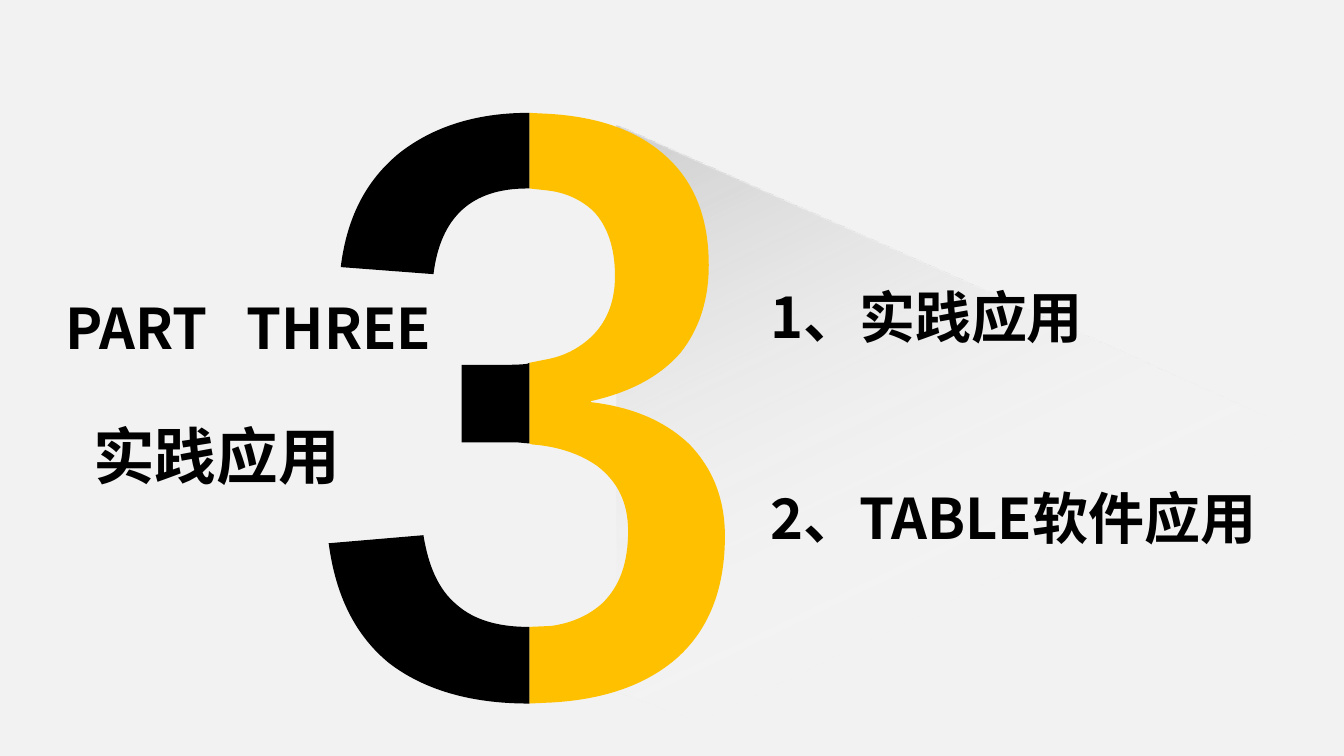
"""Build the section slide for part three."""
from dataclasses import dataclass

from lxml import etree
from pptx import Presentation
from pptx import util as u
from pptx.dml.color import RGBColor
from pptx.enum import text
from pptx.oxml.ns import qn


@dataclass(frozen=True)
class Theme:
    """Colours, fonts and type sizes."""
    paper: str = "F2F2F2"
    ink: str = "000000"
    accent: str = "FFC000"
    shadow: tuple = ((0, "85A3D9", 54), (0, "BFBFBF", 100), (54, "FFFFFF", 0))
    shadow_angle: int = 40
    font: str = "Noto Sans CJK JP"
    font_cn: str = "Noto Sans CJK SC"
    body: int = 40
    title: int = 44


CAST_SHADOW = [(4.66, 2.93), (13.98, 2.93), (13.98, 7.58), (6.96, 8.05)]

RIGHT_HALF = [
    (5.25, 1.12), (5.45, 1.13),
    (5.93, 1.16, 6.3, 1.29, 6.57, 1.52), (6.88, 1.78, 7.03, 2.15, 7.03, 2.63),
    (7.03, 2.97, 6.94, 3.26, 6.75, 3.5), (6.55, 3.73, 6.26, 3.89, 5.86, 3.98),
    (5.86, 3.99),
    (6.28, 4.04, 6.6, 4.18, 6.84, 4.41), (7.07, 4.65, 7.19, 4.95, 7.19, 5.32),
    (7.19, 5.86, 7.02, 6.27, 6.69, 6.55), (6.39, 6.8, 5.99, 6.94, 5.47, 6.97),
    (5.25, 6.98), (5.25, 6.22), (5.47, 6.21),
    (5.68, 6.18, 5.85, 6.1, 5.98, 5.98), (6.15, 5.81, 6.23, 5.58, 6.23, 5.27),
    (6.23, 4.99, 6.13, 4.78, 5.92, 4.62), (5.76, 4.51, 5.55, 4.43, 5.28, 4.41),
    (5.25, 4.4), (5.25, 3.6), (5.45, 3.56),
    (5.59, 3.53, 5.71, 3.47, 5.81, 3.39), (6, 3.24, 6.1, 3.02, 6.1, 2.74),
    (6.1, 2.45, 6.02, 2.23, 5.88, 2.09), (5.76, 1.98, 5.61, 1.91, 5.43, 1.89),
    (5.25, 1.87),
]

TOP_ARM = [
    (5.24, 1.12), (5.25, 1.12), (5.25, 1.87), (5.23, 1.87),
    (4.68, 1.87, 4.37, 2.15, 4.3, 2.72), (3.38, 2.65),
    (3.44, 2.16, 3.63, 1.79, 3.96, 1.52), (4.29, 1.26, 4.72, 1.12, 5.24, 1.12),
]

MIDDLE_ARM = [
    (5.25, 3.6), (5.25, 4.4), (5.14, 4.39),
    (5.09, 4.39, 5.04, 4.39, 4.99, 4.39), (4.58, 4.39), (4.58, 3.62),
    (4.97, 3.62), (5.06, 3.62, 5.15, 3.62, 5.23, 3.61),
]

BOTTOM_ARM = [
    (4.2, 5.31),
    (4.25, 5.62, 4.35, 5.85, 4.53, 6), (4.7, 6.15, 4.94, 6.22, 5.24, 6.22),
    (5.25, 6.22), (5.25, 6.98), (5.24, 6.98),
    (4.66, 6.98, 4.2, 6.84, 3.86, 6.58), (3.53, 6.31, 3.33, 5.92, 3.26, 5.39),
]


class Deck:
    """Hold the theme and the current slide."""

    def __init__(self, theme):
        """Start a presentation with one blank slide."""
        self.theme = theme
        self.prs = Presentation()
        self.prs.slide_width, self.prs.slide_height = u.Inches(13.33), u.Inches(7.5)
        self.s = self.prs.slides.add_slide(self.prs.slide_layouts[6])
        fill = self.s.background.fill
        fill.solid()
        fill.fore_color.rgb = RGBColor.from_string(theme.paper)

    def outline(self, shapes, segments, color):
        """Add a closed filled outline whose six-number segments are curves."""
        start, *rest = [(u.Inches(x), u.Inches(y)) for seg in segments
                        for x, y in zip(seg[::2], seg[1::2])]
        builder = shapes.build_freeform(*start)
        builder.add_line_segments(rest, close=True)
        sp = builder.convert_to_shape()
        lines = iter(list(sp._element.iter(qn("a:lnTo"))))
        for seg in segments[1:]:
            line = next(lines)
            if len(seg) == 6:
                curve = etree.Element(qn("a:cubicBezTo"))
                line.addprevious(curve)
                for node in (line, next(lines), next(lines)):
                    curve.append(node[0])
                    node.getparent().remove(node)
        sp.shadow.inherit = False
        sp.line.fill.background()
        sp.fill.solid()
        sp.fill.fore_color.rgb = RGBColor.from_string(color)
        return sp

    def cast_shadow(self, segments, rotation):
        """Add a rotated outline that fades to transparent."""
        sp = self.outline(self.s.shapes, segments, self.theme.paper)
        sp.rotation = rotation
        solid = sp._element.spPr.find(qn("a:solidFill"))
        grad = etree.Element(qn("a:gradFill"), rotWithShape="1")
        stops = etree.SubElement(grad, qn("a:gsLst"))
        for pos, color, alpha in self.theme.shadow:
            gs = etree.SubElement(stops, qn("a:gs"), pos=str(pos * 1000))
            clr = etree.SubElement(gs, qn("a:srgbClr"), val=color)
            etree.SubElement(clr, qn("a:alpha"), val=str(alpha * 1000))
        etree.SubElement(grad, qn("a:lin"), scaled="0",
                         ang=str(self.theme.shadow_angle * 60000))
        solid.getparent().replace(solid, grad)

    def numeral(self, parts):
        """Add the large numeral as a group of outlines."""
        group = self.s.shapes.add_group_shape()
        for segments, color in parts:
            self.outline(group.shapes, segments, color)

    def label(self, box, lines, size, font, tab=None, **layout):
        """Add a bold text box with one paragraph per line."""
        tf = self.s.shapes.add_textbox(*map(u.Inches, box)).text_frame
        tf.word_wrap = True
        tf.auto_size = text.MSO_AUTO_SIZE.SHAPE_TO_FIT_TEXT
        style = {"size": u.Pt(size), "name": font, "bold": True}
        for i, line in enumerate(lines):
            p = tf.paragraphs[0] if i == 0 else tf.add_paragraph()
            for key, value in layout.items():
                setattr(p, key, value)
            if tab:
                tabs = etree.SubElement(p._p.get_or_add_pPr(), qn("a:tabLst"))
                etree.SubElement(tabs, qn("a:tab"), pos=str(u.Inches(tab)), algn="l")
            r = p.add_run()
            r.text = line
            for key, value in style.items():
                setattr(r.font, key, value)
            r.font.color.rgb = RGBColor.from_string(self.theme.ink)
            etree.SubElement(r._r.get_or_add_rPr(), qn("a:ea"), typeface=font)


def main():
    """Compose and save the slide."""
    theme = Theme()
    deck = Deck(theme)
    deck.cast_shadow(CAST_SHADOW, 24.2)
    deck.label((0.55, 2.86, 4.48, 0.77), ["PART\tTHREE"], theme.body, theme.font, tab=1.8)
    deck.numeral([(RIGHT_HALF, theme.accent), (TOP_ARM, theme.ink),
                  (MIDDLE_ARM, theme.ink), (BOTTOM_ARM, theme.ink)])
    deck.label((0.35, 4.1, 3.12, 0.84), ["实践应用"], theme.title, theme.font_cn,
               alignment=text.PP_ALIGN.RIGHT)
    deck.label((7.54, 1.42, 5.86, 4.14), ["1、实践应用", "2、TABLE软件应用"],
               theme.body, theme.font, line_spacing=3.0)
    deck.prs.save("out.pptx")


if __name__ == "__main__":
    main()
